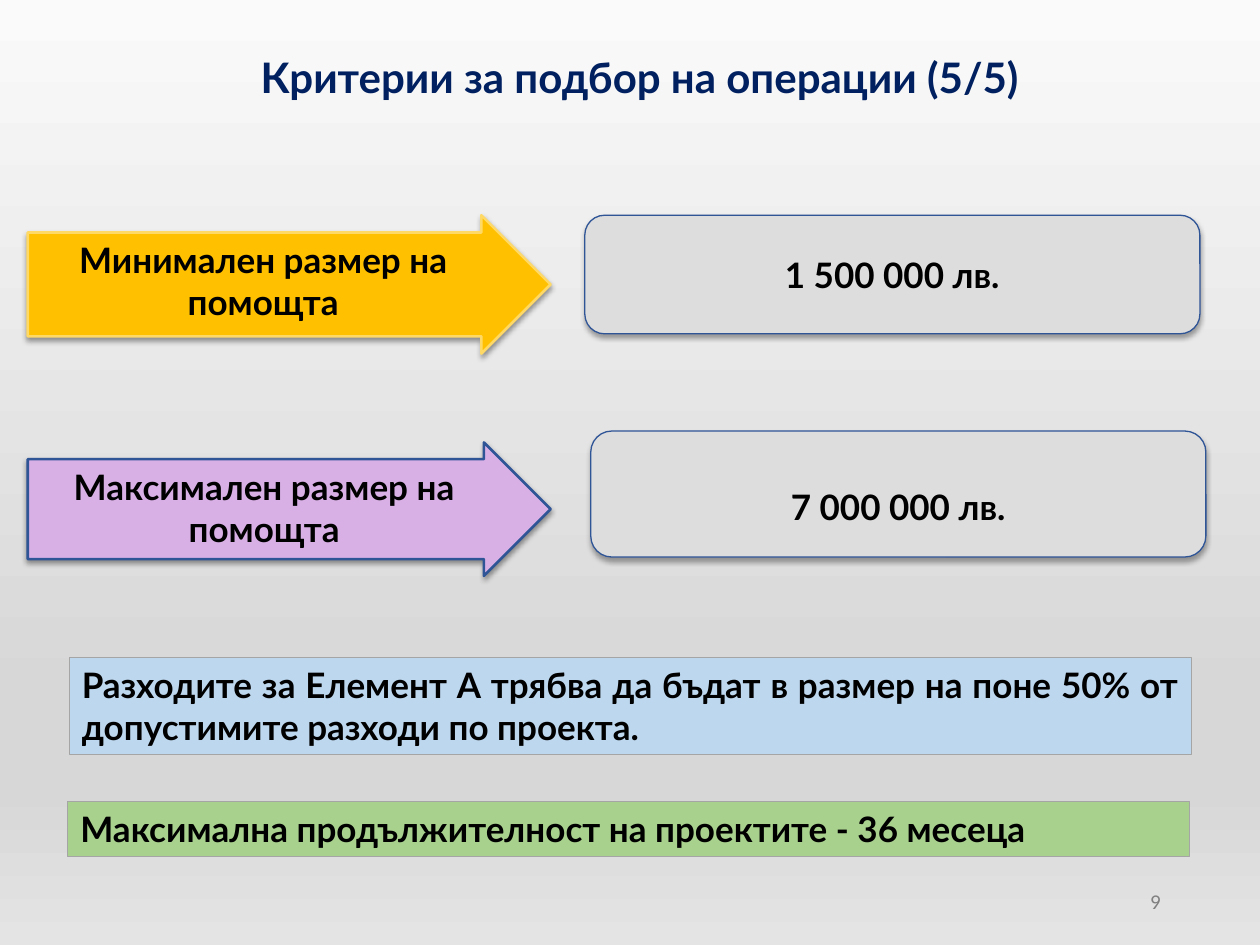
from dataclasses import dataclass

from lxml.etree import SubElement
from pptx import Presentation
from pptx.dml.color import RGBColor
from pptx.enum.shapes import MSO_SHAPE as Preset
from pptx.enum.text import MSO_ANCHOR as Anchor, MSO_AUTO_SIZE as Fit, PP_ALIGN as Align
from pptx.oxml.ns import qn
from pptx.util import Cm, Pt


@dataclass(frozen=True)
class Theme:
    heading_font: str = "Lato"
    number_font: str = "Calibri"
    title_size: float = 24
    body_size: float = 20
    number_size: float = 12
    navy: str = "002060"
    black: str = "000000"
    grey: str = "808080"
    gold: str = "FFC000"
    pale_gold: str = "FFD966"
    lilac: str = "D9B0E6"
    blue: str = "2F5597"
    silver: str = "DDDDDD"
    sky: str = "BDD7EE"
    green: str = "A9D18E"
    edge: str = "A5A5A5"
    backdrop: tuple = ((0, "FAFAFA"), (74, "D7D7D7"), (83, "D7D7D7"), (100, "E4E4E4"))


class SlideBuilder:
    def __init__(self, slide, theme):
        self.slide = slide
        self.theme = theme

    def background(self):
        fill = self.slide.background.fill
        fill.gradient()
        fill.gradient_angle = 270
        stops = self.slide.element.find(".//" + qn("a:gsLst"))
        for stop in list(stops):
            stops.remove(stop)
        for position, color in self.theme.backdrop:
            stop = SubElement(stops, qn("a:gs"), pos=str(position * 1000))
            SubElement(stop, qn("a:srgbClr"), val=color)

    def set_text(self, frame, text, align, frame_format=None, **font_format):
        frame_values = {"word_wrap": True, "auto_size": Fit.NONE,
                        "vertical_anchor": Anchor.MIDDLE, **(frame_format or {})}
        for name, value in frame_values.items():
            setattr(frame, name, value)
        frame.text = text
        paragraph = frame.paragraphs[0]
        paragraph.alignment = align
        paragraph.line_spacing = 1.0
        font = paragraph.runs[0].font
        font_values = {"name": self.theme.heading_font, "size": Pt(self.theme.body_size),
                       "bold": True, **font_format}
        color = font_values.pop("color", self.theme.black)
        for name, value in font_values.items():
            setattr(font, name, value)
        font.color.rgb = RGBColor.from_string(color)

    def title(self, text, box):
        heading = self.slide.shapes.title
        for name, value in zip(("left", "top", "width", "height"), box):
            setattr(heading, name, Cm(value))
        self.set_text(heading.text_frame, text, Align.CENTER, {"vertical_anchor": Anchor.TOP},
                      size=Pt(self.theme.title_size), color=self.theme.navy)

    def panel(self, preset, box, fill, line, weight):
        panel = self.slide.shapes.add_shape(preset, *map(Cm, box))
        panel.shadow.inherit = False
        panel.fill.solid()
        panel.fill.fore_color.rgb = RGBColor.from_string(fill)
        panel.line.color.rgb = RGBColor.from_string(line)
        panel.line.width = Pt(weight)
        return panel

    def drop_shadow(self, panel, opacity, distance):
        effects = panel.element.spPr.find(qn("a:effectLst"))
        shadow = SubElement(effects, qn("a:outerShdw"), blurRad=str(Pt(3.1)),
                            dist=str(Pt(distance)), dir="5400000", rotWithShape="0")
        color = SubElement(shadow, qn("a:srgbClr"), val=self.theme.black)
        SubElement(color, qn("a:alpha"), val=str(opacity * 1000))

    def arrow(self, text, box, fill, line):
        arrow = self.panel(Preset.RIGHT_ARROW, box, fill, line, 1.5)
        arrow.adjustments[0] = 0.75
        arrow.adjustments[1] = 0.5
        self.drop_shadow(arrow, 38, 1.6)
        self.set_text(arrow.text_frame, text, Align.CENTER, {"vertical_anchor": Anchor.TOP})

    def amount(self, text, box, top_margin):
        amount = self.panel(Preset.ROUNDED_RECTANGLE, box, self.theme.silver, self.theme.blue, 0.75)
        self.drop_shadow(amount, 35, 1.8)
        self.set_text(amount.text_frame, text, Align.CENTER, {"margin_top": Cm(top_margin)})

    def banner(self, text, box, fill):
        banner = self.panel(Preset.RECTANGLE, box, fill, self.theme.edge, 0.5)
        self.set_text(banner.text_frame, text, Align.JUSTIFY,
                      {"vertical_anchor": Anchor.TOP, "auto_size": Fit.SHAPE_TO_FIT_TEXT})

    def page_number(self, text, box):
        number = self.slide.shapes.add_textbox(*map(Cm, box))
        self.set_text(number.text_frame, text, Align.RIGHT, name=self.theme.number_font,
                      size=Pt(self.theme.number_size), bold=False, color=self.theme.grey)


def main():
    theme = Theme()
    deck = Presentation()
    deck.slide_width, deck.slide_height = Cm(25.4), Cm(19.05)
    page = SlideBuilder(deck.slides.add_slide(deck.slide_layouts[5]), theme)

    page.background()
    page.title("Критерии за подбор на операции (5/5)", (1.49, 0.91, 22.81, 1.8))

    page.arrow("Минимален размер на помощта", (0.56, 4.34, 10.54, 2.79), theme.gold, theme.pale_gold)
    page.amount("1 500 000 лв.", (11.79, 4.34, 12.4, 2.39), 0.13)
    page.arrow("Максимален размер на помощта", (0.56, 8.92, 10.54, 2.69), theme.lilac, theme.blue)
    page.amount("7 000 000 лв.", (11.91, 8.69, 12.4, 2.54), 0.64)

    page.banner("Разходите за Елемент А трябва да бъдат в размер на поне 50% от "
                "допустимите разходи по проекта.", (1.4, 13.26, 22.61, 1.96), theme.sky)
    page.banner("Максимална продължителност на проектите - 36 месеца",
                (1.37, 16.15, 22.61, 1.12), theme.green)
    page.page_number("9", (17.93, 17.65, 5.72, 1.02))

    deck.save("out.pptx")


if __name__ == "__main__":
    main()
